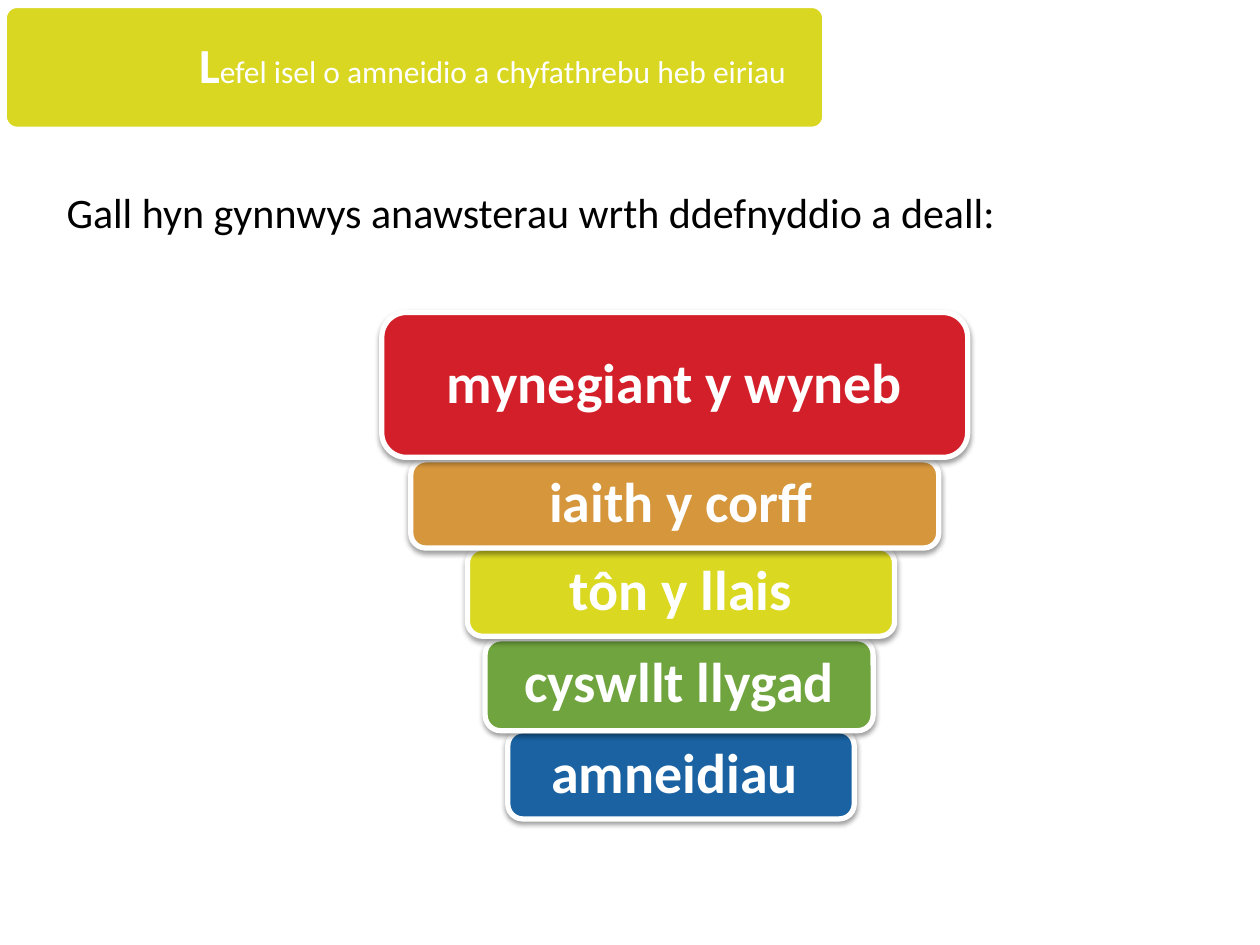
from dataclasses import dataclass

from lxml import etree
from pptx import Presentation
from pptx.dml.color import RGBColor
from pptx.enum.shapes import MSO_SHAPE as Shape
from pptx.enum.text import MSO_ANCHOR as Anchor, MSO_AUTO_SIZE as AutoSize, PP_ALIGN as Align
from pptx.oxml import parse_xml
from pptx.oxml.ns import nsdecls, qn
from pptx.util import Inches, Pt


@dataclass(frozen=True)
class Theme:
    """Colours, font and type sizes of the slide."""
    font: str = "Calibri"
    white: str = "FFFFFF"
    black: str = "000000"
    banner: str = "D9D721"
    red: str = "D31F29"
    orange: str = "D5963C"
    yellow: str = "DAD821"
    green: str = "70A43E"
    blue: str = "1A62A2"
    initial_size: int = 28
    title_size: int = 18
    intro_size: int = 24
    tier_size: int = 32


class SlideBuilder:
    """Draws styled elements on one slide."""

    def __init__(self, slide, theme):
        """Keep the slide and its theme."""
        self.slide = slide
        self.theme = theme

    def add_run(self, paragraph, text, size, color, bold=False):
        """Add one formatted run to a paragraph."""
        run = paragraph.add_run()
        run.text = text
        run.font.name = self.theme.font
        run.font.size = Pt(size)
        run.font.bold = bold
        run.font.color.rgb = RGBColor.from_string(color)

    def set_frame(self, shape, inset_x, inset_y, align):
        """Prepare a middle-anchored text frame and return its paragraph."""
        frame = shape.text_frame
        frame.word_wrap = True
        frame.auto_size = AutoSize.NONE
        frame.vertical_anchor = Anchor.MIDDLE
        frame.margin_left = frame.margin_right = Inches(inset_x)
        frame.margin_top = frame.margin_bottom = Inches(inset_y)
        paragraph = frame.paragraphs[0]
        paragraph.alignment = align
        paragraph.line_spacing = 0.9
        return paragraph

    def rounded_box(self, left, top, width, height, fill, line_width, corner):
        """Add a rounded rectangle with a white outline."""
        box = self.slide.shapes.add_shape(
            Shape.ROUNDED_RECTANGLE, Inches(left), Inches(top), Inches(width), Inches(height))
        box.adjustments[0] = corner
        box.shadow.inherit = False
        box.fill.solid()
        box.fill.fore_color.rgb = RGBColor.from_string(fill)
        box.line.color.rgb = RGBColor.from_string(self.theme.white)
        box.line.width = Pt(line_width)
        return box

    def add_shadow(self, shape):
        """Give a shape a soft shadow below it."""
        effects = shape.element.spPr.find(qn("a:effectLst"))
        shadow = parse_xml(
            f'<a:outerShdw {nsdecls("a")} blurRad="{Pt(3.1)}" dist="{Pt(1.6)}" '
            'dir="5400000" rotWithShape="0"/>')
        color = etree.SubElement(shadow, qn("a:srgbClr"), val=self.theme.black)
        etree.SubElement(color, qn("a:alpha"), val="38000")
        effects.append(shadow)

    def title(self, initial, rest):
        """Place the title, with a large initial, on its banner."""
        theme = self.theme
        banner = self.rounded_box(0.04, 0.05, 6.5, 0.97, theme.banner, 2, 0.1)
        title = self.slide.shapes.title
        title.element.addprevious(banner.element)
        title.left, title.top = Inches(1.46), Inches(0.08)
        title.width, title.height = Inches(5.12), Inches(0.91)
        paragraph = self.set_frame(title, 0.12, 0.12, Align.LEFT)
        self.add_run(paragraph, initial, theme.initial_size, theme.white, bold=True)
        self.add_run(paragraph, rest, theme.title_size, theme.white)

    def intro(self, text):
        """Add the line that introduces the tiers."""
        box = self.slide.shapes.add_textbox(Inches(0.43), Inches(1.43), Inches(8.98), Inches(0.5))
        box.text_frame.word_wrap = True
        self.add_run(box.text_frame.paragraphs[0], text, self.theme.intro_size, self.theme.black)

    def tier(self, text, left, top, width, height, fill):
        """Add one labelled tier of the funnel."""
        box = self.rounded_box(left, top, width, height, fill, 3, 0.17)
        self.add_shadow(box)
        paragraph = self.set_frame(box, 0.17, 0.1, Align.CENTER)
        self.add_run(paragraph, text, self.theme.tier_size, self.theme.white, bold=True)


def main():
    """Build and save the slide."""
    presentation = Presentation()
    presentation.slide_width, presentation.slide_height = Inches(10), Inches(7.5)
    theme = Theme()
    builder = SlideBuilder(presentation.slides.add_slide(presentation.slide_layouts[5]), theme)
    builder.title("L", "efel isel o amneidio a chyfathrebu heb eiriau")
    builder.intro("Gall hyn gynnwys anawsterau wrth ddefnyddio a deall:")
    tiers = [
        ("amneidiau ", 4.03, 5.8, 2.75, 0.7, theme.blue),
        ("cyswllt llygad", 3.85, 5.07, 3.08, 0.73, theme.green),
        ("tôn y llais", 3.71, 4.35, 3.39, 0.7, theme.yellow),
        (" iaith y corff", 3.26, 3.65, 4.19, 0.7, theme.orange),
        ("mynegiant y wyneb", 3.03, 2.48, 4.65, 1.15, theme.red),
    ]
    for tier in tiers:
        builder.tier(*tier)
    presentation.save("out.pptx")


if __name__ == "__main__":
    main()
